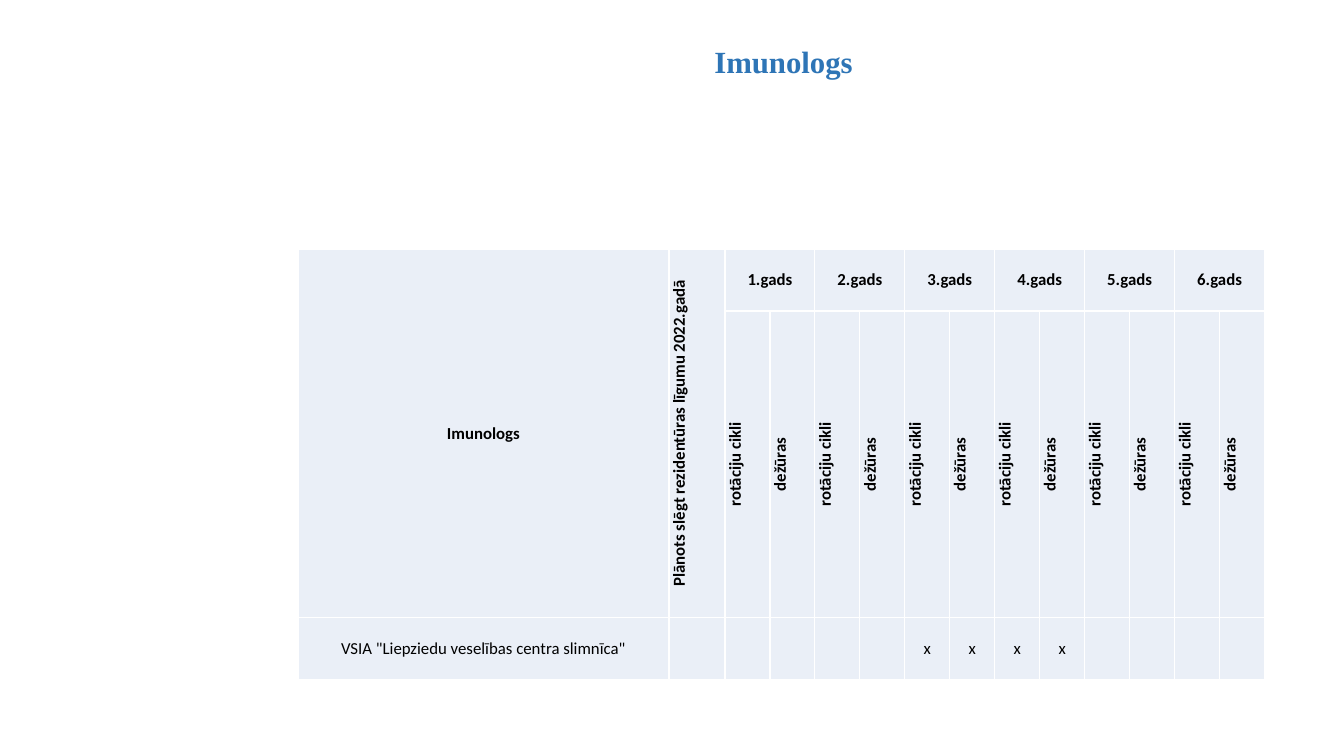
from lxml import etree
from pptx import Presentation
from pptx.dml.color import RGBColor
from pptx.enum.text import MSO_ANCHOR, PP_ALIGN
from pptx.oxml.ns import qn
from pptx.util import Pt

CENTER = PP_ALIGN.CENTER
TOP = MSO_ANCHOR.TOP
MIDDLE = MSO_ANCHOR.MIDDLE

BLUE = RGBColor(0x2E, 0x75, 0xB6)
BLACK = RGBColor(0x00, 0x00, 0x00)
WHITE = RGBColor(0xFF, 0xFF, 0xFF)
PALE = RGBColor(0xEA, 0xEF, 0xF7)

YEARS = 6
COL_WIDTHS = [371, 56] + [45] * (2 * YEARS)
ROW_HEIGHTS = [62, 143, 62]
HOSPITAL = 'VSIA "Liepziedu veselības centra slimnīca"'
MARKED_YEARS = (3, 4)


def px(n):
    return round(n * 914400 / 100.8)


def write(tf, text, font="Calibri", size=12, color=BLACK, bold=False, spacing=None):
    p = tf.paragraphs[0]
    p.alignment = CENTER
    p.line_spacing = spacing
    r = p.add_run()
    r.text = text
    r.font.name = font
    r.font.size = Pt(size)
    r.font.bold = bold
    r.font.color.rgb = color


def style_cell(cell):
    tcPr = cell._tc.get_or_add_tcPr()
    for side in ("lnL", "lnR", "lnT", "lnB"):
        ln = etree.SubElement(tcPr, qn(f"a:{side}"), w=str(Pt(1)))
        fill = etree.SubElement(ln, qn("a:solidFill"))
        etree.SubElement(fill, qn("a:srgbClr"), val=str(WHITE))
    cell.fill.solid()
    cell.fill.fore_color.rgb = PALE
    cell.vertical_anchor = MIDDLE
    cell.margin_left = cell.margin_right = cell.margin_top = cell.margin_bottom = 0


def write_cell(cell, text, bold=True, upward=False):
    if upward:
        cell._tc.get_or_add_tcPr().set("vert", "vert270")
    write(cell.text_frame, text, bold=bold)


def add_title(slide, x, y, w, h):
    tf = slide.shapes.add_textbox(px(x), px(y), px(w), px(h)).text_frame
    tf.word_wrap = True
    tf.vertical_anchor = TOP
    write(tf, "Imunologs", font="Times New Roman", size=22, color=BLUE,
          bold=True, spacing=0.9)


def add_rotation_table(slide, x, y):
    table = slide.shapes.add_table(
        len(ROW_HEIGHTS), len(COL_WIDTHS), px(x), px(y),
        px(sum(COL_WIDTHS)), px(sum(ROW_HEIGHTS))).table
    table.first_row = False
    table.horz_banding = False
    for col, width in zip(table.columns, COL_WIDTHS):
        col.width = px(width)
    for row, height in zip(table.rows, ROW_HEIGHTS):
        row.height = px(height)
    for cell in table.iter_cells():
        style_cell(cell)

    for c in (0, 1):
        table.cell(0, c).merge(table.cell(1, c))
    write_cell(table.cell(0, 0), "Imunologs")
    write_cell(table.cell(0, 1), "Plānots slēgt rezidentūras līgumu 2022.gadā", upward=True)
    write_cell(table.cell(2, 0), HOSPITAL, bold=False)

    for year in range(1, YEARS + 1):
        first = 2 * year
        table.cell(0, first).merge(table.cell(0, first + 1))
        write_cell(table.cell(0, first), f"{year}.gads")
        for c, label in enumerate(("rotāciju cikli", "dežūras"), first):
            write_cell(table.cell(1, c), label, upward=True)
            if year in MARKED_YEARS:
                write_cell(table.cell(2, c), "x", bold=False)


def main():
    prs = Presentation()
    prs.slide_width = px(1344)
    prs.slide_height = px(756)
    slide = prs.slides.add_slide(prs.slide_layouts[6])
    add_rotation_table(slide, 298, 249)
    add_title(slide, 305, 42, 957, 105)
    prs.save("out.pptx")


if __name__ == "__main__":
    main()
